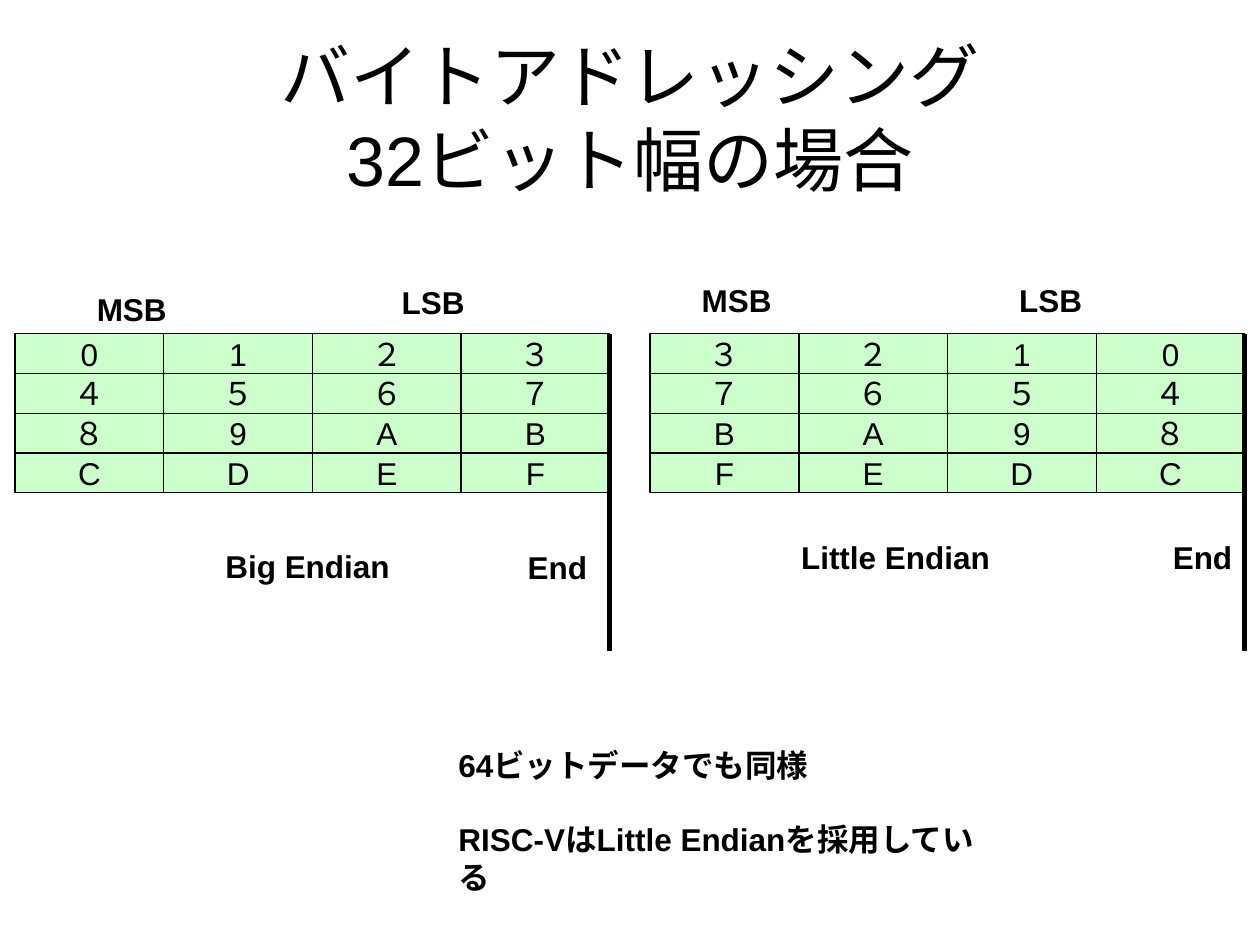
from pptx import Presentation
from pptx.dml.color import RGBColor
from pptx.enum import shapes, text
from pptx.oxml.ns import qn
from pptx.util import Inches, Pt
from lxml import etree

TITLE = ["バイトアドレッシング", "32ビット幅の場合"]
BIG_ROWS = ["01２３", "４５６７", "８9AB", "CDEF"]
LITTLE_ROWS = [row[::-1] for row in BIG_ROWS]
GRIDS = [(0.12, BIG_ROWS), (5.16, LITTLE_ROWS)]
LABELS = [
    ("MSB", 0.67, 2.25, 0.76),
    ("LSB", 3.09, 2.2, 0.7),
    ("Big Endian", 1.69, 4.29, 1.51),
    ("End", 4.09, 4.3, 0.67),
    ("MSB", 5.47, 2.18, 0.76),
    ("LSB", 7.99, 2.18, 0.7),
    ("Little Endian", 6.26, 4.22, 1.7),
    ("End", 9.21, 4.22, 0.67),
]
NOTES = ["64ビットデータでも同様", "RISC-VはLittle Endianを採用している"]
COLORS = {"ink": "000000", "cell": "CCFFCC"}
FONT = "Arial"
GRID_TOP, GRID_HEIGHT, CELL_W = 2.65, 1.26, 1.18
CELL_H = GRID_HEIGHT / len(BIG_ROWS)
END_BOTTOM = 5.17


def rgb(name):
    return RGBColor.from_string(COLORS[name])


def add_run(p, content, size=18, bold=False):
    r = p.add_run()
    r.text = content
    r.font.name = FONT
    r.font.size = Pt(size)
    r.font.bold = bold
    r.font.color.rgb = rgb("ink")


def add_text(slide, lines, left, top, width, height, wrap):
    tf = slide.shapes.add_textbox(
        Inches(left), Inches(top), Inches(width), Inches(height)).text_frame
    tf.word_wrap = wrap
    tf.auto_size = text.MSO_AUTO_SIZE.SHAPE_TO_FIT_TEXT
    for i, line in enumerate(lines):
        p = tf.add_paragraph() if i else tf.paragraphs[0]
        if i:
            p.space_before = Pt(21)
        add_run(p, line, bold=True)


def add_cell(slide, content, left, top):
    sp = slide.shapes.add_shape(
        shapes.MSO_SHAPE.RECTANGLE,
        Inches(left), Inches(top), Inches(CELL_W), Inches(CELL_H))
    sp.shadow.inherit = False
    sp.fill.solid()
    sp.fill.fore_color.rgb = rgb("cell")
    sp.line.color.rgb = rgb("ink")
    sp.line.width = Pt(0.75)
    tf = sp.text_frame
    tf.word_wrap = False
    tf.vertical_anchor = text.MSO_ANCHOR.MIDDLE
    p = tf.paragraphs[0]
    p.alignment = text.PP_ALIGN.CENTER
    add_run(p, content)


def add_end_line(slide, x):
    line = slide.shapes.add_connector(
        shapes.MSO_CONNECTOR.STRAIGHT,
        Inches(x), Inches(GRID_TOP), Inches(x), Inches(END_BOTTOM))
    line.line.color.rgb = rgb("ink")
    line.line.width = Pt(3)
    etree.SubElement(line._element.spPr, qn("a:effectLst"))


def main():
    prs = Presentation()
    prs.slide_width, prs.slide_height = Inches(10), Inches(7.5)
    s = prs.slides.add_slide(prs.slide_layouts[5])

    title = s.shapes.title
    title.left, title.top = Inches(0.5), Inches(0.3)
    title.width, title.height = Inches(9), Inches(1.25)
    title.text_frame.vertical_anchor = text.MSO_ANCHOR.MIDDLE
    p = title.text_frame.paragraphs[0]
    p.alignment = text.PP_ALIGN.CENTER
    for i, line in enumerate(TITLE):
        if i:
            p.add_line_break()
        add_run(p, line, size=40)

    for left, rows in GRIDS:
        for i, row in enumerate(rows):
            for j, address in enumerate(row):
                add_cell(s, address, left + j * CELL_W, GRID_TOP + i * CELL_H)
        add_end_line(s, left + len(rows[0]) * CELL_W)

    for label, left, top, width in LABELS:
        add_text(s, [label], left, top, width, 0.4, wrap=False)
    add_text(s, NOTES, 3.54, 5.87, 4.44, 1.01, wrap=True)

    prs.save("out.pptx")


if __name__ == "__main__":
    main()
